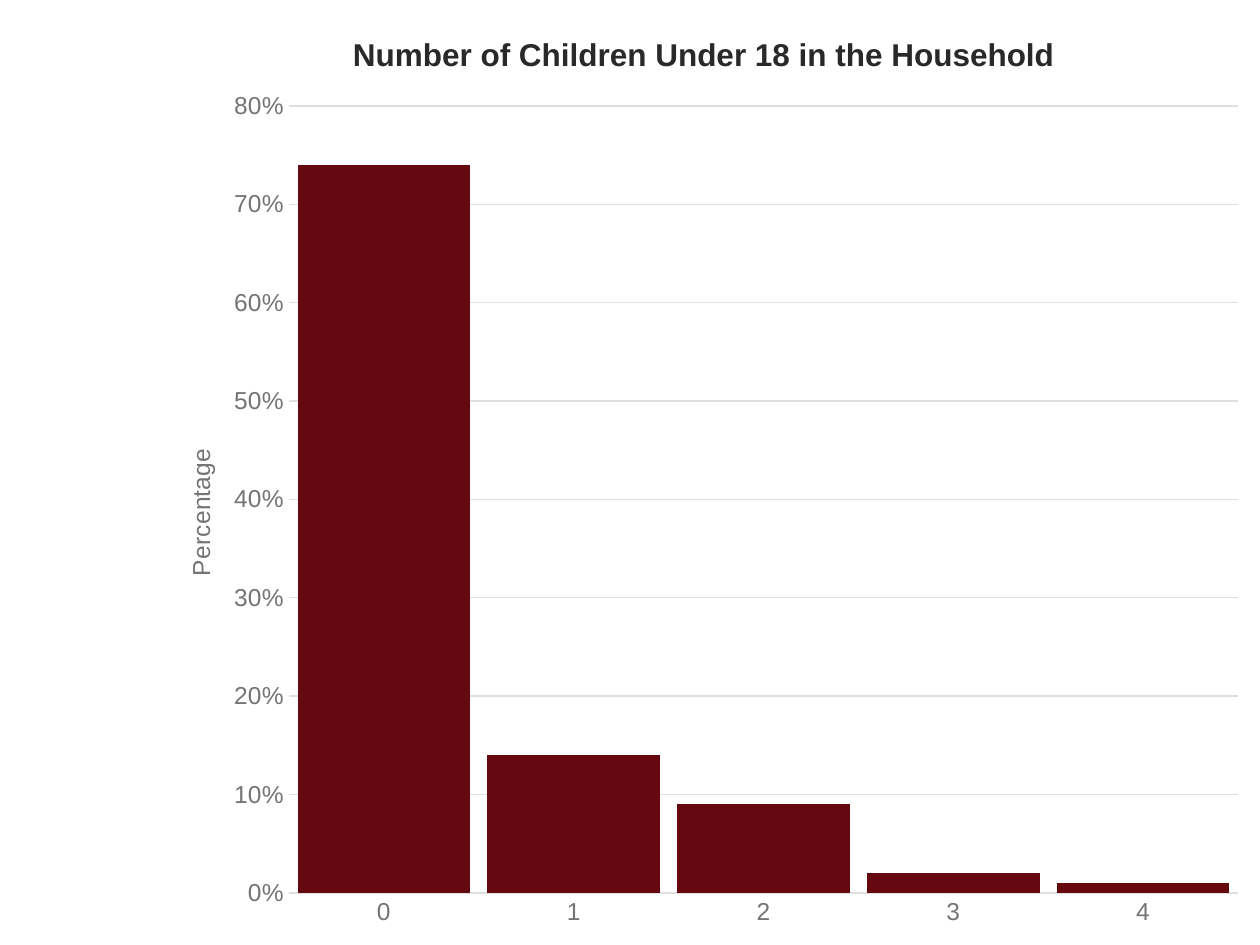
"""Build a slide with a column chart of children under 18 per household."""
from dataclasses import dataclass

from lxml import etree
from pptx import Presentation
from pptx.chart.data import CategoryChartData
from pptx.dml.color import RGBColor
from pptx.enum.chart import XL_CHART_TYPE, XL_TICK_MARK
from pptx.oxml.ns import qn
from pptx.util import Pt

COLUMN = XL_CHART_TYPE.COLUMN_CLUSTERED
NO_TICK = XL_TICK_MARK.NONE
PX = 914400 / 126
CHART_X, CHART_W, CHART_H = 147, 1113, 945


@dataclass(frozen=True)
class Theme:
    font: str = "Arial"
    ink: RGBColor = RGBColor.from_string("292929")
    label: RGBColor = RGBColor.from_string("747474")
    grid: RGBColor = RGBColor.from_string("DFDFDF")
    bar: RGBColor = RGBColor.from_string("66080F")
    base_size: Pt = Pt(10)
    label_size: Pt = Pt(14)
    title_size: Pt = Pt(18)
    line: Pt = Pt(0.75)


def style(font, size, color, bold=False):
    font.name, font.size, font.bold = theme.font, size, bold
    font.color.rgb = color


def place(element, index, **fractions):
    for old in element.findall(qn("c:layout")):
        element.remove(old)
    layout = etree.Element(qn("c:layout"))
    manual = etree.SubElement(layout, qn("c:manualLayout"))
    if "w" in fractions:
        etree.SubElement(manual, qn("c:layoutTarget"), val="inner")
    for edge in ("xMode", "yMode"):
        etree.SubElement(manual, qn("c:" + edge), val="edge")
    for name, value in fractions.items():
        etree.SubElement(manual, qn("c:" + name), val=str(value))
    element.insert(index, layout)


theme = Theme()
prs = Presentation()
prs.slide_width, prs.slide_height = round(1260 * PX), round(945 * PX)
s = prs.slides.add_slide(prs.slide_layouts[6])

data = CategoryChartData(number_format="0%")
data.categories = ["0", "1", "2", "3", "4"]
data.add_series("Series 1", [0.74, 0.14, 0.09, 0.02, 0.01])
box = [round(v * PX) for v in (CHART_X, 0, CHART_W, CHART_H)]
chart = s.shapes.add_chart(COLUMN, *box, data).chart
style(chart.font, theme.base_size, theme.ink)
chart.has_legend = False

plot = chart.plots[0]
plot.gap_width, plot.overlap = 10, -27
plot.vary_by_categories = False
fill = plot.series[0].format.fill
fill.solid()
fill.fore_color.rgb = theme.bar

cat, val = chart.category_axis, chart.value_axis
for axis in (cat, val):
    axis.major_tick_mark = axis.minor_tick_mark = NO_TICK
    style(axis.tick_labels.font, theme.label_size, theme.label)
val.minimum_scale, val.maximum_scale, val.major_unit = 0, 0.8, 0.1
val.tick_labels.number_format = "0%"
val.tick_labels.number_format_is_linked = False
val.format.line.fill.background()
for line in (cat.format.line, val.major_gridlines.format.line):
    line.color.rgb, line.width = theme.grid, theme.line

chart.has_title = val.has_title = True
titles = (
    (chart.chart_title, "Number of Children Under 18 in the Household",
     theme.title_size, theme.ink, True, 0.18, 0.03),
    (val.axis_title, "Percentage",
     theme.label_size, theme.label, False, 0.03, 0.47),
)
for title, text, size, color, bold, x, y in titles:
    r = title.text_frame.paragraphs[0].add_run()
    r.text = text
    style(r.font, size, color, bold)
    place(title._element, 1, x=x, y=y)
body = val.axis_title._element.find(".//" + qn("a:bodyPr"))
body.set("rot", "-5400000")
body.set("vert", "horz")
place(chart._chartSpace.find(".//" + qn("c:plotArea")), 0,
      x=round(142 / CHART_W, 4), y=round(106 / CHART_H, 4),
      w=round(949 / CHART_W, 4), h=round(787 / CHART_H, 4))

prs.save("out.pptx")
